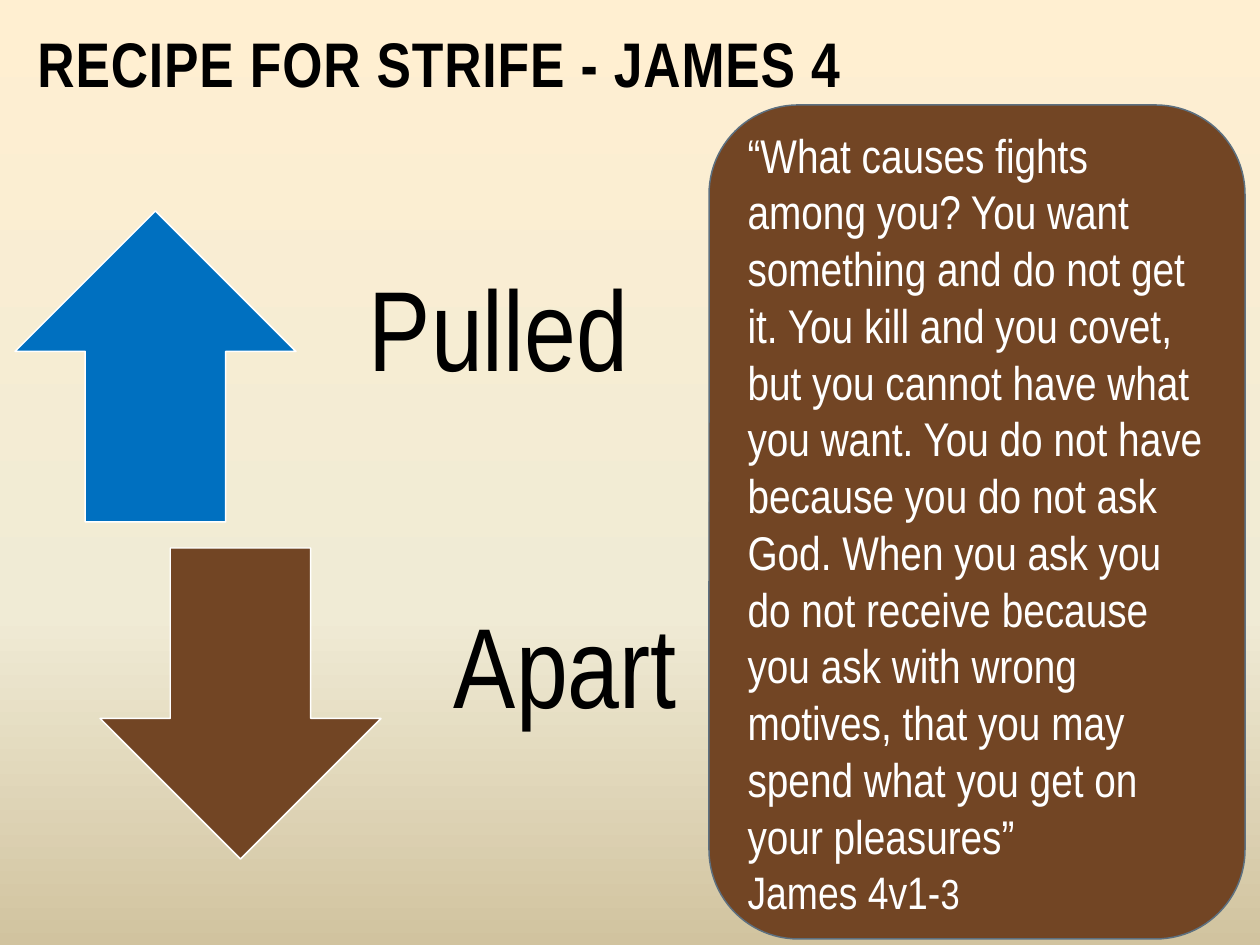
from copy import deepcopy
from dataclasses import dataclass

from pptx import Presentation
from pptx.dml.color import RGBColor
from pptx.enum.shapes import MSO_SHAPE
from pptx.enum.text import MSO_ANCHOR, PP_ALIGN
from pptx.oxml.ns import qn
from pptx.util import Emu, Pt

SCALE = 914400 / 126


@dataclass(frozen=True)
class Theme:
    font: str = "Arial Narrow"
    black: str = "000000"
    white: str = "FFFFFF"
    blue: str = "0070C0"
    brown: str = "724524"
    edge: str = "5D7080"
    back: tuple = ((0, "FFEFD1"), (0.65, "F0EBD5"), (1, "D1C39F"))
    title: int = 36
    label: int = 65
    quote: int = 27
    cite: int = 26
    verse: int = 24
    line: float = 0.85


@dataclass(frozen=True)
class Box:
    left: int
    top: int
    width: int
    height: int

    def emu(self) -> list[Emu]:
        return [px(n) for n in (self.left, self.top, self.width, self.height)]


@dataclass(frozen=True)
class Force:
    """An arrow with the word at its right."""
    kind: MSO_SHAPE
    fill: str
    word: str
    left: int
    top: int


THEME = Theme()
ARROW = (281, 311)
LABEL_STEP = 290
LABEL_WIDTH = 478
INSET = 64

FORCES = (
    Force(MSO_SHAPE.UP_ARROW, THEME.blue, "Pulled", 15, 211),
    Force(MSO_SHAPE.DOWN_ARROW, THEME.brown, "Apart", 100, 548),
)
QUOTE = (
    "“What causes fights among you? You want something and do not get it. "
    "You kill and you covet, but you cannot have what you want. You do not "
    "have because you do not ask God. When you ask you do not receive because "
    "you ask with wrong motives, that you may spend what you get on your pleasures”"
)


def px(count: int) -> Emu:
    return Emu(round(count * SCALE))


def write(para, text: str, *, size: int, color: str = THEME.black,
          bold: bool = False, track: int = 0) -> None:
    """Add a run; track is letter spacing in hundredths of a point."""
    run = para.add_run()
    run.text = text
    font = run.font
    font.name, font.size, font.bold = THEME.font, Pt(size), bold
    font.color.rgb = RGBColor.from_string(color)
    if track:
        run._r.get_or_add_rPr().set("spc", str(track))


def add_frame(slide, box: Box, anchor: MSO_ANCHOR):
    frame = slide.shapes.add_textbox(*box.emu()).text_frame
    frame.word_wrap = True
    frame.vertical_anchor = anchor
    return frame


def add_form(slide, kind: MSO_SHAPE, box: Box, fill: str, line: str):
    form = slide.shapes.add_shape(kind, *box.emu())
    form.shadow.inherit = False
    form.fill.solid()
    form.fill.fore_color.rgb = RGBColor.from_string(fill)
    form.line.color.rgb = RGBColor.from_string(line)
    form.line.width = Pt(THEME.line)
    return form


def paint_back(slide) -> None:
    fill = slide.background.fill
    fill.gradient()
    fill.gradient_angle = 270
    stops = slide.element.find(".//" + qn("a:gsLst"))
    stops.append(deepcopy(stops[0]))
    for stop, (place, color) in zip(fill.gradient_stops, THEME.back):
        stop.position = place
        stop.color.rgb = RGBColor.from_string(color)


def draw_force(slide, force: Force) -> None:
    width, height = ARROW
    add_form(slide, force.kind, Box(force.left, force.top, width, height),
             force.fill, THEME.white)
    box = Box(force.left + LABEL_STEP, force.top, LABEL_WIDTH, height)
    frame = add_frame(slide, box, MSO_ANCHOR.MIDDLE)
    frame.margin_left = frame.margin_right = frame.margin_bottom = px(INSET)
    frame.margin_top = 0
    para = frame.paragraphs[0]
    para.line_spacing = 0.9
    write(para, force.word, size=THEME.label)


def draw_quote(slide) -> None:
    card = add_form(slide, MSO_SHAPE.ROUNDED_RECTANGLE, Box(709, 105, 536, 834),
                    THEME.brown, THEME.edge)
    frame = card.text_frame
    frame.word_wrap = True
    frame.vertical_anchor = MSO_ANCHOR.MIDDLE
    body, source = frame.paragraphs[0], frame.add_paragraph()
    body.alignment = source.alignment = PP_ALIGN.LEFT
    write(body, QUOTE, size=THEME.quote, color=THEME.white)
    write(source, "James 4v1-", size=THEME.cite, color=THEME.white)
    write(source, "3", size=THEME.verse, color=THEME.white)


def main() -> None:
    deck = Presentation()
    deck.slide_width, deck.slide_height = px(1260), px(945)
    slide = deck.slides.add_slide(deck.slide_layouts[6])
    paint_back(slide)
    title = add_frame(slide, Box(25, -4, 1092, 110), MSO_ANCHOR.BOTTOM)
    write(title.paragraphs[0], "RECIPE FOR STRIFE - JAMES 4",
          size=THEME.title, bold=True, track=50)
    for force in FORCES:
        draw_force(slide, force)
    draw_quote(slide)
    deck.save("out.pptx")


if __name__ == "__main__":
    main()
